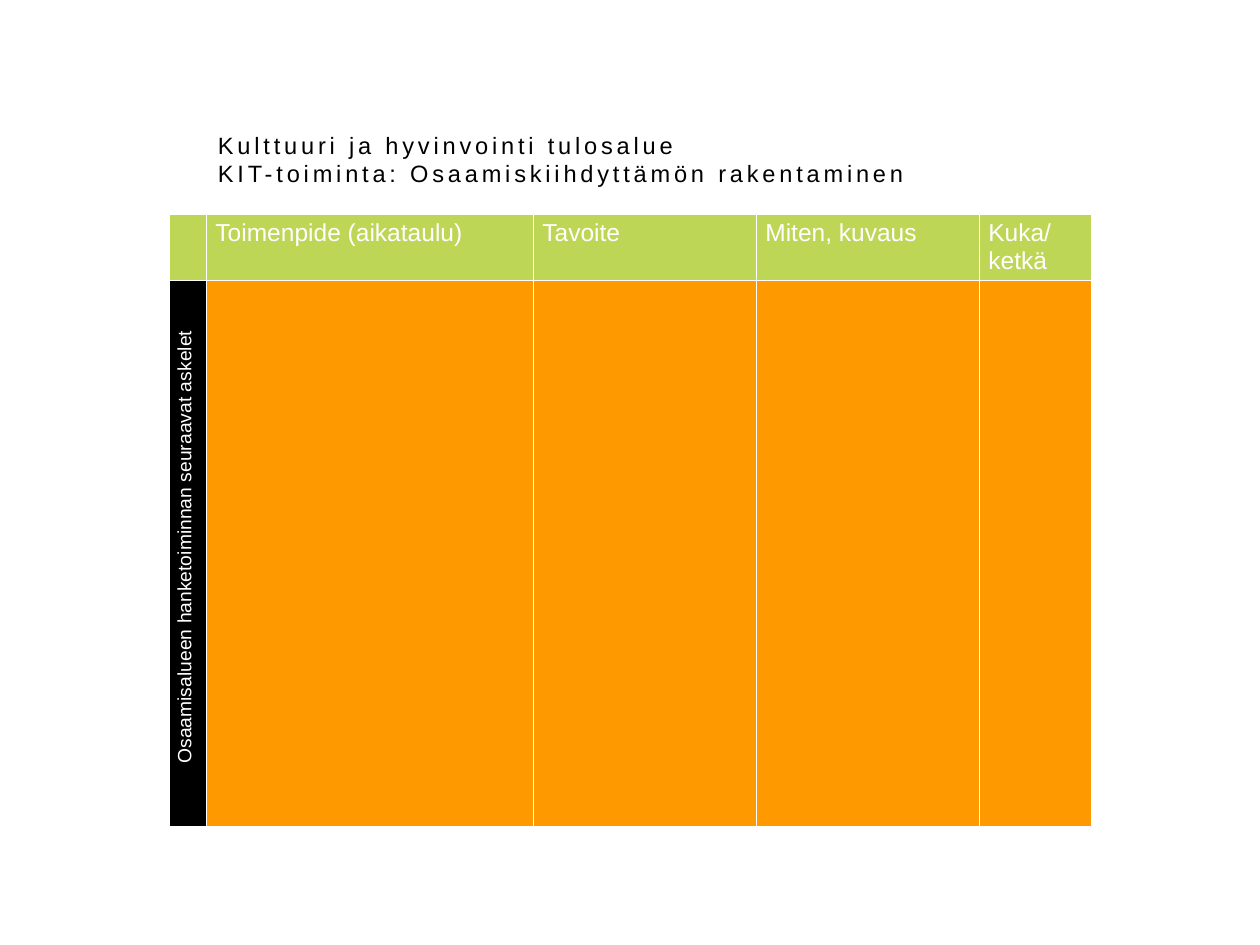
from lxml import etree
from pptx import Presentation
from pptx.dml.color import RGBColor
from pptx.enum.text import MSO_ANCHOR, PP_ALIGN
from pptx.oxml.ns import qn
from pptx.util import Inches, Pt

LEFT = PP_ALIGN.LEFT
TOP, MIDDLE = MSO_ANCHOR.TOP, MSO_ANCHOR.MIDDLE
COLS, ROWS = 100, 75
GREEN, ORANGE, BLACK, WHITE = "BED656", "FF9900", "000000", "FFFFFF"


def tint(code):
    """Turn a hex string into a colour."""
    return RGBColor.from_string(code)


def apply(item, values):
    """Set each attribute named in a dict."""
    for name, value in values.items():
        setattr(item, name, value)


class Deck:
    """Hold the style, the grid and the current slide."""

    font = "Arial"
    pad = {"margin_left": Inches(0.07), "margin_right": Inches(0.07),
           "margin_top": Inches(0.04), "margin_bottom": Inches(0.04)}

    def __init__(self, width, height):
        """Open a deck with one title-only slide."""
        self.prs = Presentation()
        apply(self.prs, {"slide_width": Inches(width), "slide_height": Inches(height)})
        self.slide = self.prs.slides.add_slide(self.prs.slide_layouts[5])

    def x(self, cols):
        """Give the length of a number of grid columns."""
        return round(self.prs.slide_width * cols / COLS)

    def y(self, rows):
        """Give the length of a number of grid rows."""
        return round(self.prs.slide_height * rows / ROWS)

    def label(self, frame, text, size, color):
        """Fill a text frame with left-aligned plain text."""
        frame.text = text
        for para in frame.paragraphs:
            para.alignment = LEFT
            for run in para.runs:
                apply(run.font, {"name": self.font, "size": Pt(size), "bold": False})
                run.font.color.rgb = tint(color)

    def title(self, text, left, top, width, height, size, gap):
        """Place the title with spaced letters."""
        shape = self.slide.shapes.title
        apply(shape, {"left": self.x(left), "top": self.y(top),
                      "width": self.x(width), "height": self.y(height)})
        apply(shape.text_frame, {"word_wrap": True, "vertical_anchor": MIDDLE})
        self.label(shape.text_frame, text, size, BLACK)
        for run in shape.text_frame.paragraphs[0].runs:
            run.font._element.set("spc", str(round(gap * 100)))

    def table(self, left, top, widths, heights):
        """Add a bare table from its column widths and row heights."""
        frame = self.slide.shapes.add_table(
            len(heights), len(widths), self.x(left), self.y(top),
            self.x(sum(widths)), self.y(sum(heights)))
        grid = frame.table
        apply(grid, {"first_row": False, "horz_banding": False})
        for col, width in zip(grid.columns, widths):
            col.width = self.x(width)
        for row, height in zip(grid.rows, heights):
            row.height = self.y(height)
        return grid

    def cell(self, cell, text, fill, size):
        """Fill one cell and draw its white borders."""
        apply(cell, self.pad | {"vertical_anchor": TOP})
        cell.fill.solid()
        cell.fill.fore_color.rgb = tint(fill)
        self.label(cell.text_frame, text, size, WHITE)
        props = cell._tc.get_or_add_tcPr()
        for spot, side in enumerate(("lnL", "lnR", "lnT", "lnB")):
            line = etree.Element(qn(f"a:{side}"), w=str(Pt(1)))
            paint = etree.SubElement(line, qn("a:solidFill"))
            etree.SubElement(paint, qn("a:srgbClr"), val=WHITE)
            props.insert(spot, line)

    def turn(self, cell, indent):
        """Make a cell read upwards from an indent."""
        cell._tc.get_or_add_tcPr().set("vert", "vert270")
        para = cell.text_frame.paragraphs[0]._p.get_or_add_pPr()
        para.set("marL", str(self.y(indent)))


def main():
    """Build the action plan slide."""
    deck = Deck(10, 7.5)
    deck.title("Kulttuuri ja hyvinvointi tulosalue\v"
               "KIT-toiminta: Osaamiskiihdyttämön rakentaminen",
               16.3, 11.5, 67.5, 2.2, 13.5, 2.2)
    heads = ["", "Toimenpide (aikataulu)", "Tavoite", "Miten, kuvaus", "Kuka/\nketkä"]
    steps = "Osaamisalueen hanketoiminnan seuraavat askelet"
    plan = deck.table(13.4, 17, [3, 25.95, 17.7, 17.7, 8.9], [5.25, 43.35])
    for col, head in enumerate(heads):
        deck.cell(plan.cell(0, col), head, GREEN, 14)
        text, fill = ("", ORANGE) if col else (steps, BLACK)
        deck.cell(plan.cell(1, col), text, fill, 11)
    deck.turn(plan.cell(1, 0), 4.3)
    deck.prs.save("out.pptx")


if __name__ == "__main__":
    main()
